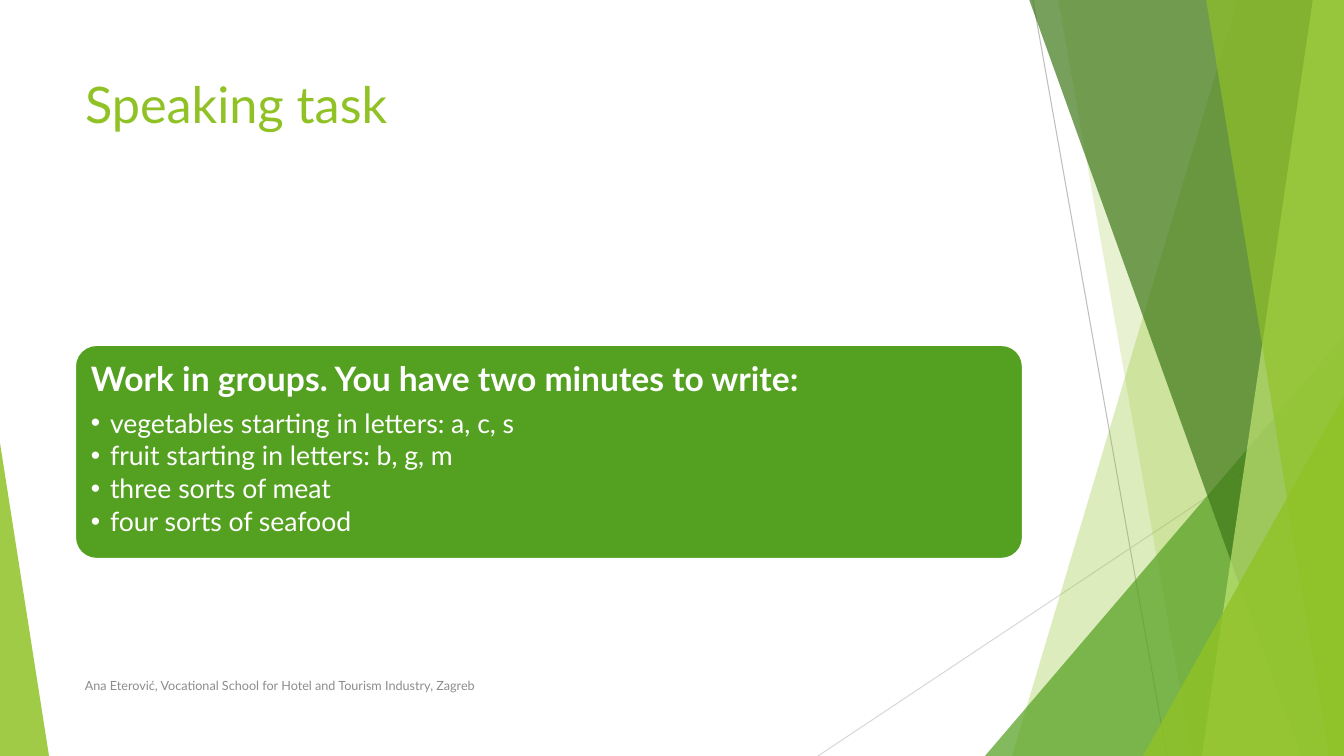
from dataclasses import dataclass

from lxml.etree import SubElement
from pptx import Presentation
from pptx.dml.color import RGBColor
from pptx.enum.shapes import MSO_CONNECTOR, MSO_SHAPE
from pptx.enum.text import MSO_ANCHOR, MSO_AUTO_SIZE, PP_ALIGN
from pptx.oxml.ns import qn
from pptx.util import Emu, Inches, Pt

WIDTH, HEIGHT = 1344, 756
EMU_PER_PX = Inches(7.5) / HEIGHT
FONT = "Lato"

LIME = RGBColor(0x90, 0xC2, 0x26)
GREEN = RGBColor(0x54, 0xA0, 0x21)
DARK_GREEN = RGBColor(0x3F, 0x78, 0x19)
PALE_LIME = RGBColor(0xC0, 0xE4, 0x74)
WHITE = RGBColor(0xFF, 0xFF, 0xFF)
GRAY = RGBColor(0x8C, 0x8C, 0x8C)
SILVER = RGBColor(0xBF, 0xBF, 0xBF)
LIGHT_GRAY = RGBColor(0xD9, 0xD9, 0xD9)


@dataclass(frozen=True)
class Box:
    left: int
    top: int
    width: int
    height: int

    def emu(self) -> tuple:
        return px(self.left), px(self.top), px(self.width), px(self.height)


@dataclass(frozen=True)
class Ray:
    start: tuple[int, int]
    end: tuple[int, int]
    color: RGBColor


@dataclass(frozen=True)
class Facet:
    """A full-height band from a slanted left edge to the slide's right edge."""
    top_x: int
    bottom_x: int
    color: RGBColor
    opacity: int


@dataclass(frozen=True)
class Corner:
    """A triangle standing on the bottom edge of the slide."""
    box: Box
    apex: float
    color: RGBColor
    opacity: int


RAYS = [
    Ray((1033, 0), (1167, HEIGHT), SILVER),
    Ray((WIDTH, 406), (818, HEIGHT), LIGHT_GRAY),
]
DECORATION = [
    Facet(1238, 1012, LIME, 30),
    Facet(1058, 1192, LIME, 20),
    Corner(Box(985, 336, 359, 420), 1, GREEN, 72),
    Facet(1029, 1301, DARK_GREEN, 70),
    Facet(1313, 1202, PALE_LIME, 70),
    Facet(1206, 1329, LIME, 65),
    Corner(Box(1143, 396, 201, 360), 1, LIME, 80),
    Corner(Box(0, 443, 49, 313), 0, LIME, 85),
]
HEADING = "Work in groups. You have two minutes to write:"
TASKS = [
    "vegetables starting in letters: a, c, s",
    "fruit starting in letters: b, g, m",
    "three sorts of meat",
    "four sorts of seafood",
]


def px(length: int) -> Emu:
    return Emu(round(length * EMU_PER_PX))


def place(shape, box: Box) -> None:
    shape.left, shape.top, shape.width, shape.height = box.emu()


def fill_shape(shape, color: RGBColor, opacity: int = 100) -> None:
    shape.shadow.inherit = False
    shape.fill.solid()
    shape.fill.fore_color.rgb = color
    if opacity < 100:
        color_element = shape.element.spPr.find(".//" + qn("a:srgbClr"))
        SubElement(color_element, qn("a:alpha"), val=str(opacity * 1000))


def draw_ray(slide, ray: Ray) -> None:
    connector = slide.shapes.add_connector(
        MSO_CONNECTOR.STRAIGHT, *map(px, ray.start + ray.end))
    connector.line.color.rgb = ray.color
    connector.line.width = Pt(0.75)
    SubElement(connector.element.spPr, qn("a:effectLst"))


def draw_decoration(slide, part: Facet | Corner) -> None:
    if isinstance(part, Facet):
        builder = slide.shapes.build_freeform(part.top_x, -1, scale=EMU_PER_PX)
        builder.add_line_segments(
            [(WIDTH, -1), (WIDTH, HEIGHT), (part.bottom_x, HEIGHT)], close=True)
        shape = builder.convert_to_shape()
    else:
        shape = slide.shapes.add_shape(
            MSO_SHAPE.ISOSCELES_TRIANGLE, *part.box.emu())
        shape.adjustments[0] = part.apex
    fill_shape(shape, part.color, part.opacity)
    shape.line.fill.background()


def set_frame(text_frame, anchor: MSO_ANCHOR) -> None:
    text_frame.word_wrap = True
    text_frame.auto_size = MSO_AUTO_SIZE.NONE
    text_frame.vertical_anchor = anchor


def format_paragraph(paragraph, size: float, color: RGBColor,
                     bold: bool = False) -> None:
    paragraph.alignment = PP_ALIGN.LEFT
    for run in paragraph.runs:
        run.font.name = FONT
        run.font.size = Pt(size)
        run.font.bold = bold
        run.font.color.rgb = color


def set_bullet(paragraph, indent: int, bullet: str = "") -> None:
    properties = paragraph._p.get_or_add_pPr()
    properties.set("marL", str(px(indent)))
    properties.set("indent", str(-px(indent)))
    if bullet:
        SubElement(properties, qn("a:buChar"), char=bullet)
    else:
        SubElement(properties, qn("a:buNone"))


def fill_task_list(body) -> None:
    text_frame = body.text_frame
    text_frame.text = "\n".join([HEADING, *TASKS])
    set_frame(text_frame, MSO_ANCHOR.TOP)
    text_frame.margin_left = text_frame.margin_right = px(10)
    text_frame.margin_top = text_frame.margin_bottom = px(10)
    for index, paragraph in enumerate(text_frame.paragraphs):
        is_heading = index == 0
        paragraph.level = 0 if is_heading else 1
        paragraph.line_spacing = 0.9
        paragraph.space_before = Pt(0)
        paragraph.space_after = Pt(8.4 if is_heading else 2.85)
        format_paragraph(paragraph, 24 if is_heading else 19, WHITE, is_heading)
        if is_heading:
            set_bullet(paragraph, 0)
        else:
            set_bullet(paragraph, 19, "•")


def main() -> None:
    presentation = Presentation()
    presentation.slide_width, presentation.slide_height = px(WIDTH), px(HEIGHT)
    slide = presentation.slides.add_slide(presentation.slide_layouts[1])
    title, body = slide.placeholders

    # Background facets
    for ray in RAYS:
        draw_ray(slide, ray)
    for part in DECORATION:
        draw_decoration(slide, part)

    # Title
    place(title, Box(75, 68, 948, 145))
    title.text_frame.text = "Speaking task"
    set_frame(title.text_frame, MSO_ANCHOR.TOP)
    format_paragraph(title.text_frame.paragraphs[0], 36, LIME)

    # Task card
    card = slide.shapes.add_shape(
        MSO_SHAPE.ROUNDED_RECTANGLE, *Box(75, 345, 948, 214).emu())
    card.adjustments[0] = 0.1
    fill_shape(card, GREEN)
    card.line.color.rgb = WHITE
    card.line.width = Pt(1.5)
    place(body, Box(81, 352, 935, 202))
    fill_task_list(body)

    # Both placeholders go in front of the drawn shapes
    for placeholder in (title, body):
        placeholder.element.getparent().append(placeholder.element)

    # Footer
    footer = slide.shapes.add_textbox(*Box(75, 666, 695, 40).emu())
    footer.text_frame.text = (
        "Ana Eterović, Vocational School for Hotel and Tourism Industry, Zagreb")
    set_frame(footer.text_frame, MSO_ANCHOR.MIDDLE)
    format_paragraph(footer.text_frame.paragraphs[0], 9, GRAY)

    presentation.save("out.pptx")


if __name__ == "__main__":
    main()
